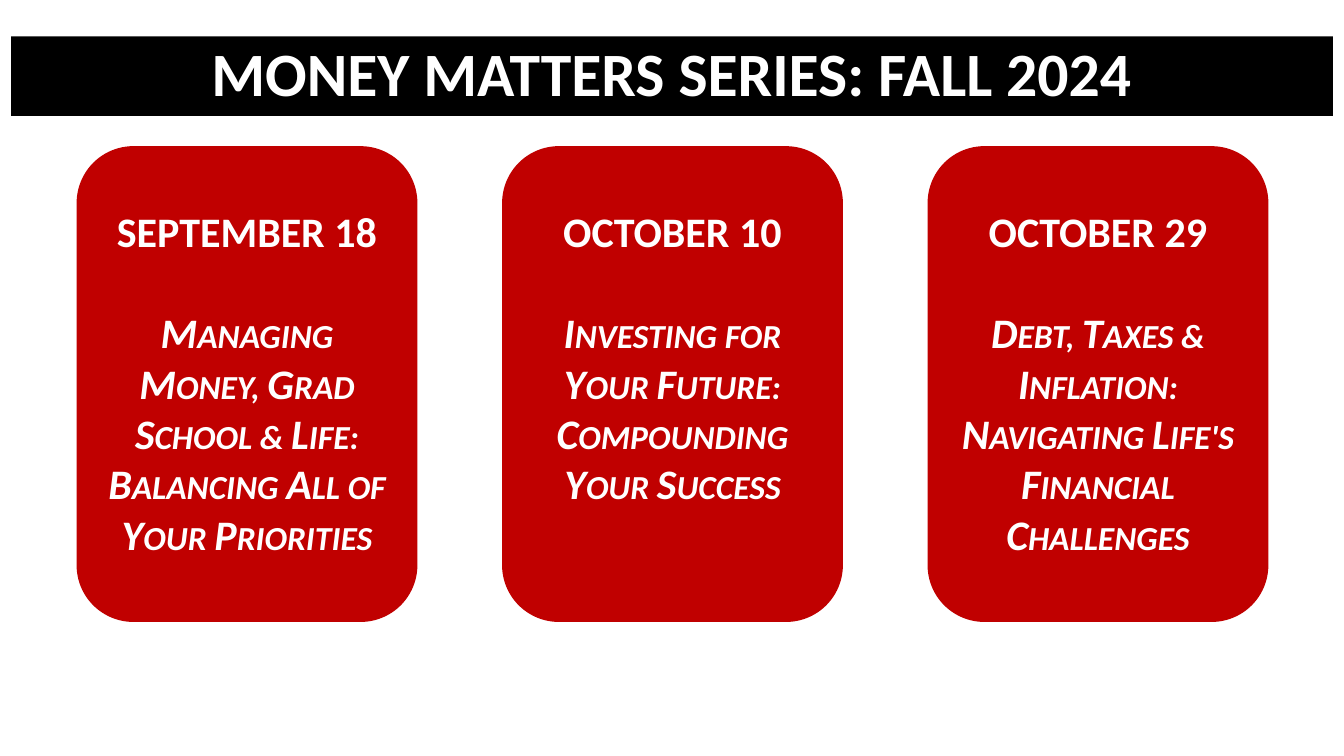
from pptx import Presentation
from pptx.dml.color import RGBColor
from pptx.enum.shapes import MSO_SHAPE
from pptx.enum.text import MSO_ANCHOR, MSO_AUTO_SIZE, PP_ALIGN
from pptx.util import Inches, Pt


def tint(code):
    return RGBColor.from_string(code)


class Poster:
    face = {"name": "Calibri", "bold": True}
    white, black, red = "FFFFFF", "000000", "C00000"

    def __init__(self, slide):
        self.slide = slide

    def paint(self, shape, fill):
        shape.fill.solid()
        shape.fill.fore_color.rgb = tint(fill)
        shape.line.fill.background()

    def label(self, para, text, size, **extra):
        run = para.add_run()
        run.text = text
        para.alignment = PP_ALIGN.CENTER
        for key, value in {**self.face, "size": Pt(size), **extra}.items():
            setattr(run.font, key, value)
        run.font.color.rgb = tint(self.white)
        return run

    def title(self, text, box):
        shape = self.slide.shapes.title
        for key, value in zip(("left", "top", "width", "height"), box):
            setattr(shape, key, Inches(value))
        self.paint(shape, self.black)
        frame = shape.text_frame
        frame.auto_size = MSO_AUTO_SIZE.NONE
        frame.vertical_anchor = MSO_ANCHOR.MIDDLE
        para = frame.paragraphs[0]
        para.line_spacing = 0.9
        self.label(para, text, 44)

    def card(self, date, topic, box):
        shape = self.slide.shapes.add_shape(
            MSO_SHAPE.ROUNDED_RECTANGLE, *map(Inches, box))
        shape.shadow.inherit = False
        self.paint(shape, self.red)
        frame = shape.text_frame
        frame.word_wrap = True
        frame.vertical_anchor = MSO_ANCHOR.TOP
        frame.margin_top = Inches(0.42)
        self.label(frame.paragraphs[0], date, 30)
        para = frame.add_paragraph()
        para.space_before = Pt(36.6)
        run = self.label(para, topic, 30, italic=True)
        run._r.get_or_add_rPr().set("cap", "small")


def main():
    deck = Presentation()
    deck.slide_width, deck.slide_height = Inches(13.33), Inches(7.5)
    poster = Poster(deck.slides.add_slide(deck.slide_layouts[5]))
    poster.title("MONEY MATTERS SERIES: FALL 2024", (0.11, 0.36, 13.11, 0.79))
    talks = [
        ("SEPTEMBER 18", "Managing Money, Grad School & Life: "
         "Balancing All of Your Priorities"),
        ("OCTOBER 10", "Investing for Your Future: Compounding Your Success"),
        ("OCTOBER 29", "Debt, Taxes & Inflation: "
         "Navigating Life's Financial Challenges"),
    ]
    left, step = 0.76, 4.22
    for i, (date, topic) in enumerate(talks):
        poster.card(date, topic, (left + i * step, 1.45, 3.38, 4.72))
    deck.save("out.pptx")


if __name__ == "__main__":
    main()
